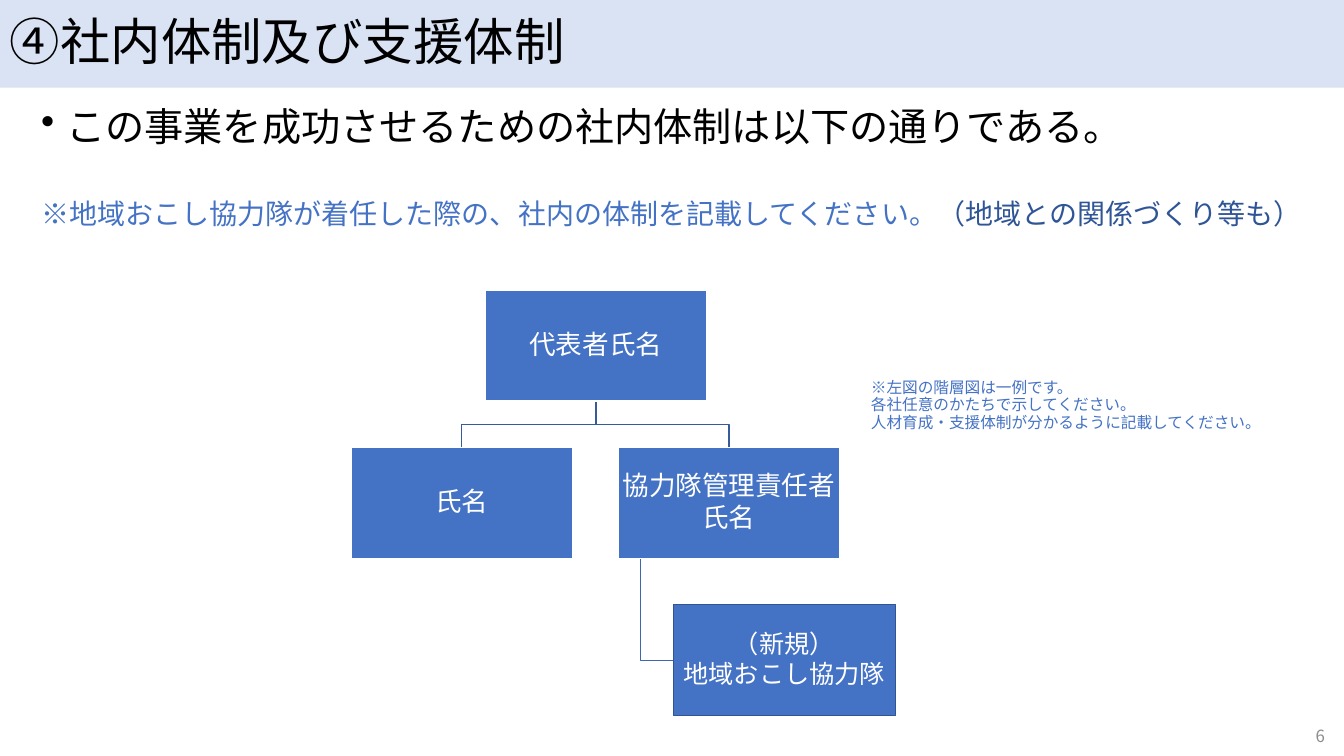
import pptx
import pptx.util
import pptx.dml.color
import pptx.enum.shapes
import pptx.enum.text
import pptx.oxml
import pptx.oxml.ns
import lxml.etree
from dataclasses import dataclass

Inches = pptx.util.Inches
Pt = pptx.util.Pt
ALIGN = pptx.enum.text.PP_ALIGN
ANCHOR = pptx.enum.text.MSO_ANCHOR


@dataclass(frozen=True)
class Theme:
    font: str = "Noto Sans CJK JP"
    black: str = "000000"
    white: str = "FFFFFF"
    banner: str = "DAE3F3"
    blue: str = "4472C4"
    dark_blue: str = "2F5597"
    new_member_line: str = "325491"
    branch_line: str = "365B9D"
    leaf_line: str = "3E67B2"
    grey: str = "8C8C8C"
    title_size: float = 36
    lead_size: float = 28
    note_size: float = 20
    box_size: float = 19
    new_member_size: float = 18
    number_size: float = 12
    example_size: float = 11.2


THEME = Theme()

# Organisation chart grid
BOX_WIDTH, BOX_HEIGHT = 2.2, 1.1
ROW_TOP, ROW_PITCH = 2.88, 1.56


def rgb(value):
    return pptx.dml.color.RGBColor.from_string(value)


def add_runs(paragraph, runs, size):
    """Add (text, colour) runs in the theme font."""
    for text, color in runs:
        run = paragraph.add_run()
        run.text = text
        run.font.size = Pt(size)
        run.font.color.rgb = rgb(color)
        run.font.name = THEME.font
        east_asian = lxml.etree.SubElement(run._r.get_or_add_rPr(), pptx.oxml.ns.qn("a:ea"))
        east_asian.set("typeface", THEME.font)


def add_bullet(paragraph, indent):
    properties = paragraph._p.get_or_add_pPr()
    properties.set("marL", str(Inches(indent)))
    properties.set("indent", str(-Inches(indent)))
    bullet = lxml.etree.SubElement(properties, pptx.oxml.ns.qn("a:buChar"))
    bullet.set("char", "•")


def write_text(frame, lines, *, size, color=THEME.black, align=ALIGN.LEFT, anchor=ANCHOR.TOP,
               spacing=0.9, before=0, after=0, margin=None):
    """Write one paragraph for each line of text."""
    frame.word_wrap = True
    frame.vertical_anchor = anchor
    if margin is not None:
        frame.margin_left = frame.margin_right = Inches(margin)
        frame.margin_top = frame.margin_bottom = Inches(margin)
    for index, line in enumerate(lines):
        paragraph = frame.add_paragraph() if index else frame.paragraphs[0]
        paragraph.alignment = align
        paragraph.line_spacing = spacing
        paragraph.space_before = Pt(before)
        paragraph.space_after = Pt(after)
        add_runs(paragraph, [(line, color)], size)


def add_text_box(slide, left, top, width, height):
    return slide.shapes.add_textbox(
        Inches(left), Inches(top), Inches(width), Inches(height)).text_frame


def add_rectangle(slide, left, top, width, height, fill, line=None):
    shape = slide.shapes.add_shape(
        pptx.enum.shapes.MSO_SHAPE.RECTANGLE,
        Inches(left), Inches(top), Inches(width), Inches(height))
    shape.shadow.inherit = False
    shape.fill.solid()
    shape.fill.fore_color.rgb = rgb(fill)
    if line:
        shape.line.color.rgb = rgb(line)
        shape.line.width = Pt(1)
    else:
        shape.line.fill.background()
    return shape


def add_branch(slide, points, color):
    """Draw an open angled line through the points."""
    corners = [(Inches(x), Inches(y)) for x, y in points]
    builder = slide.shapes.build_freeform(*corners[0])
    builder.add_line_segments(corners[1:], close=False)
    shape = builder.convert_to_shape()
    shape.shadow.inherit = False
    shape.fill.background()
    shape.line.color.rgb = rgb(color)
    shape.line.width = Pt(1)


def add_member(slide, left, row, lines, size=THEME.box_size, line=THEME.white):
    box = add_rectangle(slide, left, ROW_TOP + row * ROW_PITCH, BOX_WIDTH, BOX_HEIGHT,
                        THEME.blue, line)
    write_text(box.text_frame, lines, size=size, color=THEME.white, align=ALIGN.CENTER,
               anchor=ANCHOR.MIDDLE, after=2.3, margin=0.01)


def add_lead(slide):
    frame = add_text_box(slide, 0.31, 1.02, 12.93, 1.75)
    write_text(frame, ["この事業を成功させるための社内体制は以下の通りである。"], size=THEME.lead_size)
    add_bullet(frame.paragraphs[0], 0.25)
    note = frame.add_paragraph()
    note.line_spacing = 0.9
    note.space_before = Pt(36)
    add_runs(note, [
        ("※地域おこし協力隊が着任した際の、社内の体制を記載してください。", THEME.blue),
        ("（地域との関係づくり等も）", THEME.dark_blue),
    ], THEME.note_size)


def add_organisation(slide):
    head_left, staff_left, manager_left, new_left = 4.81, 3.48, 6.13, 6.68

    # Branches run behind the boxes
    head_center = head_left + BOX_WIDTH / 2
    head_bottom = ROW_TOP + BOX_HEIGHT
    staff_top = ROW_TOP + ROW_PITCH
    middle = (head_bottom + staff_top) / 2
    stem = 6.35
    new_middle = ROW_TOP + 2 * ROW_PITCH + BOX_HEIGHT / 2
    add_branch(slide, [(stem, staff_top + BOX_HEIGHT), (stem, new_middle),
                       (new_left, new_middle)], THEME.leaf_line)
    for left in (manager_left, staff_left):
        center = left + BOX_WIDTH / 2
        add_branch(slide, [(head_center, head_bottom), (head_center, middle),
                           (center, middle), (center, staff_top)], THEME.branch_line)

    add_member(slide, head_left, 0, ["代表者氏名"])
    add_member(slide, staff_left, 1, ["氏名"])
    add_member(slide, manager_left, 1, ["協力隊管理責任者", "氏名"])
    add_member(slide, new_left, 2, ["（新規）", "地域おこし協力隊"],
               size=THEME.new_member_size, line=THEME.new_member_line)


def main():
    presentation = pptx.Presentation()
    presentation.slide_width = Inches(13.33)
    presentation.slide_height = Inches(7.5)
    slide = presentation.slides.add_slide(presentation.slide_layouts[6])

    # Lead sentence and page number
    add_lead(slide)
    write_text(add_text_box(slide, 10.24, 7.1, 3, 0.4), ["6"], size=THEME.number_size,
               color=THEME.grey, align=ALIGN.RIGHT, anchor=ANCHOR.MIDDLE, spacing=1.0)

    # Title banner
    banner = add_rectangle(slide, 0, 0, 13.33, 0.87, THEME.banner)
    write_text(banner.text_frame, ["④社内体制及び支援体制"], size=THEME.title_size,
               anchor=ANCHOR.MIDDLE)

    # Organisation chart and its explanation
    add_organisation(slide)
    write_text(add_text_box(slide, 8.54, 3.75, 4.29, 0.84), [
        "※左図の階層図は一例です。",
        "各社任意のかたちで示してください。",
        "人材育成・支援体制が分かるように記載してください。",
    ], size=THEME.example_size, color=THEME.blue, spacing=0.7, before=3)

    presentation.save("out.pptx")


if __name__ == "__main__":
    main()
